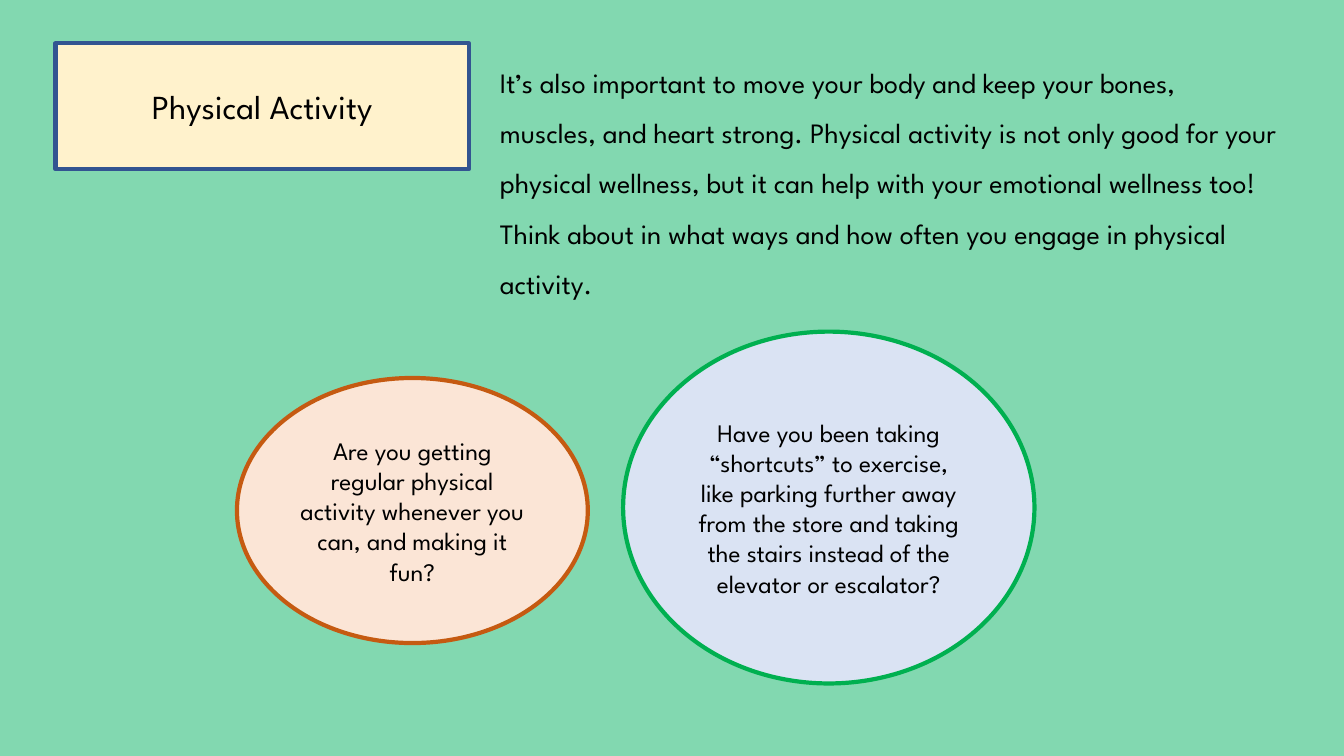
import lxml.etree
import pptx
import pptx.dml.color
import pptx.enum.shapes
import pptx.enum.text
import pptx.oxml.ns
import pptx.util


def color(code):
    """Turn a hex string into a colour."""
    return pptx.dml.color.RGBColor.from_string(code)


class Deck:
    """Hold the text style and the current slide."""

    font = "League Spartan"
    ink = "000000"
    edge = 3

    def __init__(self, back):
        """Open a wide deck with one title slide."""
        self.file = pptx.Presentation()
        self.file.slide_width = pptx.util.Inches(13.33)
        self.file.slide_height = pptx.util.Inches(7.5)
        self.slide = self.file.slides.add_slide(self.file.slide_layouts[5])
        self.slide.background.fill.solid()
        self.slide.background.fill.fore_color.rgb = color(back)

    def paint(self, shape, fill, line):
        """Give a shape its fill and outline."""
        shape.fill.solid()
        shape.fill.fore_color.rgb = color(fill)
        shape.line.color.rgb = color(line)
        shape.line.width = pptx.util.Pt(self.edge)

    def label(self, shape, words, size, center=True):
        """Put one paragraph into a shape."""
        frame = shape.text_frame
        frame.word_wrap = True
        para = frame.paragraphs[0]
        if center:
            frame.auto_size = pptx.enum.text.MSO_AUTO_SIZE.NONE
            frame.vertical_anchor = pptx.enum.text.MSO_ANCHOR.MIDDLE
            para.alignment = pptx.enum.text.PP_ALIGN.CENTER
        run = para.add_run()
        run.text = words
        run.font.name = self.font
        run.font.size = pptx.util.Pt(size)
        run.font.color.rgb = color(self.ink)
        return para

    def title(self, box, words, fill, line):
        """Place the title as a rounded panel."""
        shape = self.slide.shapes.title
        shape.left, shape.top, shape.width, shape.height = map(pptx.util.Inches, box)
        tag = pptx.oxml.ns.qn
        form = lxml.etree.SubElement(shape.element.spPr, tag("a:prstGeom"), prst="roundRect")
        lxml.etree.SubElement(form, tag("a:avLst"))
        self.paint(shape, fill, line)
        self.label(shape, words, 24)

    def text(self, box, words):
        """Place a widely spaced text box."""
        shape = self.slide.shapes.add_textbox(*map(pptx.util.Inches, box))
        para = self.label(shape, words, 20, center=False)
        para.line_spacing = 1.5
        shape.text_frame.auto_size = pptx.enum.text.MSO_AUTO_SIZE.SHAPE_TO_FIT_TEXT

    def oval(self, box, words, fill, line):
        """Place an ellipse that asks a question."""
        kind = pptx.enum.shapes.MSO_SHAPE.OVAL
        shape = self.slide.shapes.add_shape(kind, *map(pptx.util.Inches, box))
        shape.shadow.inherit = False
        self.paint(shape, fill, line)
        self.label(shape, words, 18)


def main():
    """Build and save the slide."""
    deck = Deck("82D8B0")
    deck.title((0.55, 0.43, 4.1, 1.25), "Physical Activity", "FFF2CC", "325491")
    deck.text(
        (4.86, 0.43, 7.92, 2.56),
        "It’s also important to move your body and keep your bones, muscles, and heart "
        "strong. Physical activity is not only good for your physical wellness, but it can "
        "help with your emotional wellness too! Think about in what ways and how often you "
        "engage in physical activity.",
    )
    deck.oval(
        (6.18, 3.29, 4.08, 3.49),
        "Have you been taking “shortcuts” to exercise, like parking further away from the "
        "store and taking the stairs instead of the elevator or escalator?",
        "DAE3F3",
        "00B050",
    )
    deck.oval(
        (2.35, 3.75, 3.48, 2.63),
        "Are you getting regular physical activity whenever you can, and making it fun?",
        "FBE5D6",
        "C55A11",
    )
    deck.file.save("out.pptx")


if __name__ == "__main__":
    main()
